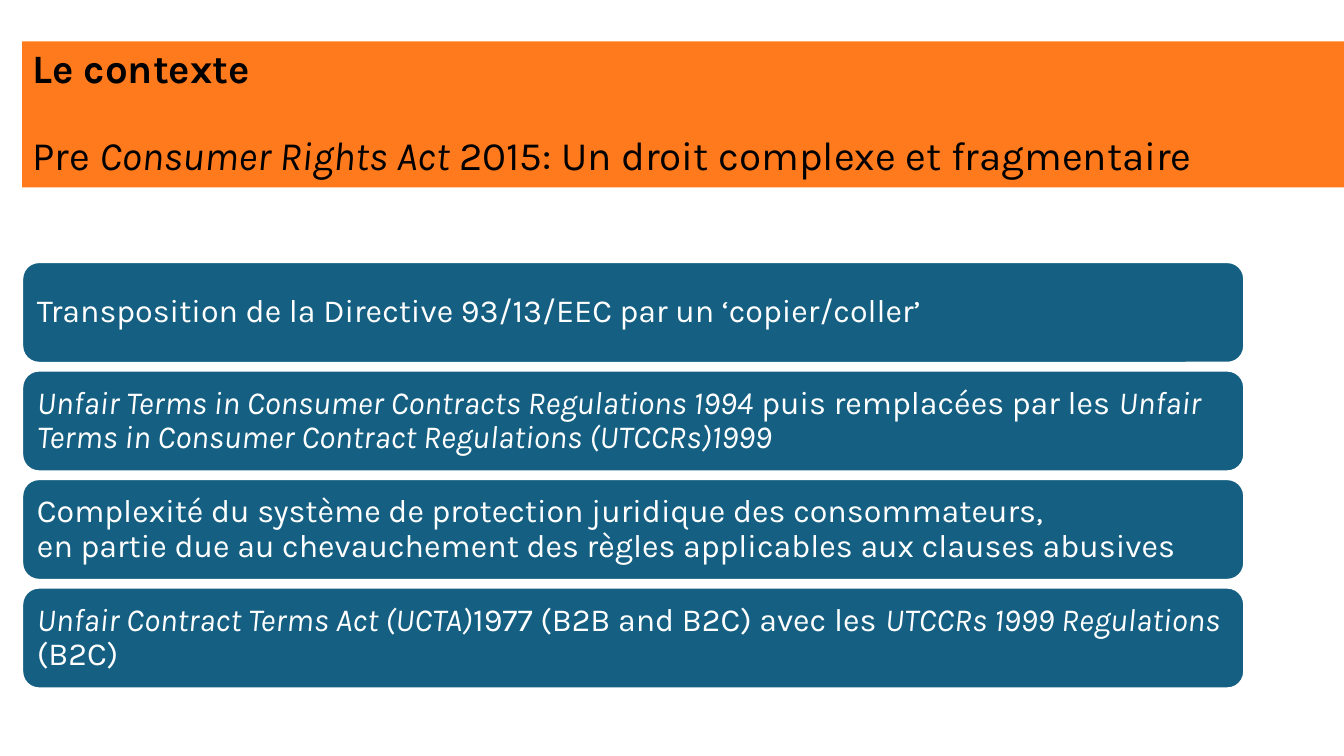
from dataclasses import dataclass

import pptx
import pptx.dml.color
import pptx.enum.shapes
import pptx.enum.text
import pptx.oxml.ns
import pptx.util
from lxml import etree

Inches = pptx.util.Inches
COLORS = {"orange": "FF6A00", "blue": "156082", "white": "FFFFFF", "black": "000000"}
FONT = "Karla"
LEFT = 0.22
FIRST_TOP, LAST_TOP = 2.6, 5.83
BAR_WIDTH, BAR_HEIGHT = 12.12, 1


@dataclass
class Span:
    text: str
    italic: bool = False
    bold: bool = False


TITLE = [
    [Span("Le contexte", bold=True)],
    [
        Span("Pre "),
        Span("Consumer Rights Act", italic=True),
        Span(" 2015: Un droit complexe et fragmentaire"),
    ],
]
BARS = [
    [Span("Transposition de la Directive 93/13/EEC par un ‘copier/coller’")],
    [
        Span("Unfair Terms in Consumer Contracts Regulations 1994 ", italic=True),
        Span("puis remplacées par les "),
        Span("Unfair Terms in Consumer Contract Regulations (UTCCRs)1999", italic=True),
    ],
    [
        Span(
            "Complexité du système de protection juridique des consommateurs,\v"
            "en partie due au chevauchement des règles applicables aux clauses abusives"
        )
    ],
    [
        Span("Unfair Contract Terms Act (UCTA)", italic=True),
        Span("1977 (B2B and B2C) avec les "),
        Span("UTCCRs 1999 Regulations ", italic=True),
        Span("(B2C)"),
    ],
]


def rgb(name: str) -> pptx.dml.color.RGBColor:
    return pptx.dml.color.RGBColor.from_string(COLORS[name])


def write_paragraph(paragraph, spans: list[Span], size: float, color: str) -> None:
    paragraph.alignment = pptx.enum.text.PP_ALIGN.LEFT
    paragraph.line_spacing = 0.9
    paragraph.text = spans[0].text
    styled = [(run, spans[0]) for run in paragraph.runs]
    for span in spans[1:]:
        run = paragraph.add_run()
        run.text = span.text
        styled.append((run, span))
    for run, span in styled:
        run.font.name = FONT
        run.font.size = pptx.util.Pt(size)
        run.font.bold = span.bold
        run.font.italic = span.italic
        run.font.color.rgb = rgb(color)


def prepare_frame(text_frame) -> None:
    text_frame.word_wrap = True
    text_frame.auto_size = pptx.enum.text.MSO_AUTO_SIZE.NONE
    text_frame.vertical_anchor = pptx.enum.text.MSO_ANCHOR.MIDDLE


def draw_title(slide) -> None:
    title = slide.shapes.title
    title.left, title.top = Inches(LEFT), Inches(0.41)
    title.width, title.height = Inches(13.12), Inches(1.45)
    title.fill.solid()
    title.fill.fore_color.rgb = rgb("orange")
    fill_color = title.element.spPr.find(".//" + pptx.oxml.ns.qn("a:srgbClr"))
    etree.SubElement(fill_color, pptx.oxml.ns.qn("a:alpha"), val="89000")
    text_frame = title.text_frame
    prepare_frame(text_frame)
    heading, subject = text_frame.paragraphs[0], text_frame.add_paragraph()
    for paragraph, spans in zip((heading, subject), TITLE):
        write_paragraph(paragraph, spans, 28.8, "black")
    subject.space_before = pptx.util.Pt(31)


def draw_bar(slide, top: float, spans: list[Span]) -> None:
    bar = slide.shapes.add_shape(
        pptx.enum.shapes.MSO_SHAPE.ROUNDED_RECTANGLE,
        Inches(LEFT), Inches(top), Inches(BAR_WIDTH), Inches(BAR_HEIGHT),
    )
    bar.shadow.inherit = False
    bar.fill.solid()
    bar.fill.fore_color.rgb = rgb("blue")
    bar.line.color.rgb = rgb("white")
    bar.line.width = pptx.util.Pt(1.5)
    text_frame = bar.text_frame
    prepare_frame(text_frame)
    text_frame.margin_left = text_frame.margin_right = Inches(0.1)
    write_paragraph(text_frame.paragraphs[0], spans, 23, "white")


def main() -> None:
    presentation = pptx.Presentation()
    presentation.slide_width = Inches(13.33)
    presentation.slide_height = Inches(7.5)
    slide = presentation.slides.add_slide(presentation.slide_layouts[5])
    draw_title(slide)
    pitch = (LAST_TOP - FIRST_TOP) / (len(BARS) - 1)
    for index, spans in enumerate(BARS):
        draw_bar(slide, FIRST_TOP + index * pitch, spans)
    presentation.save("out.pptx")


if __name__ == "__main__":
    main()
